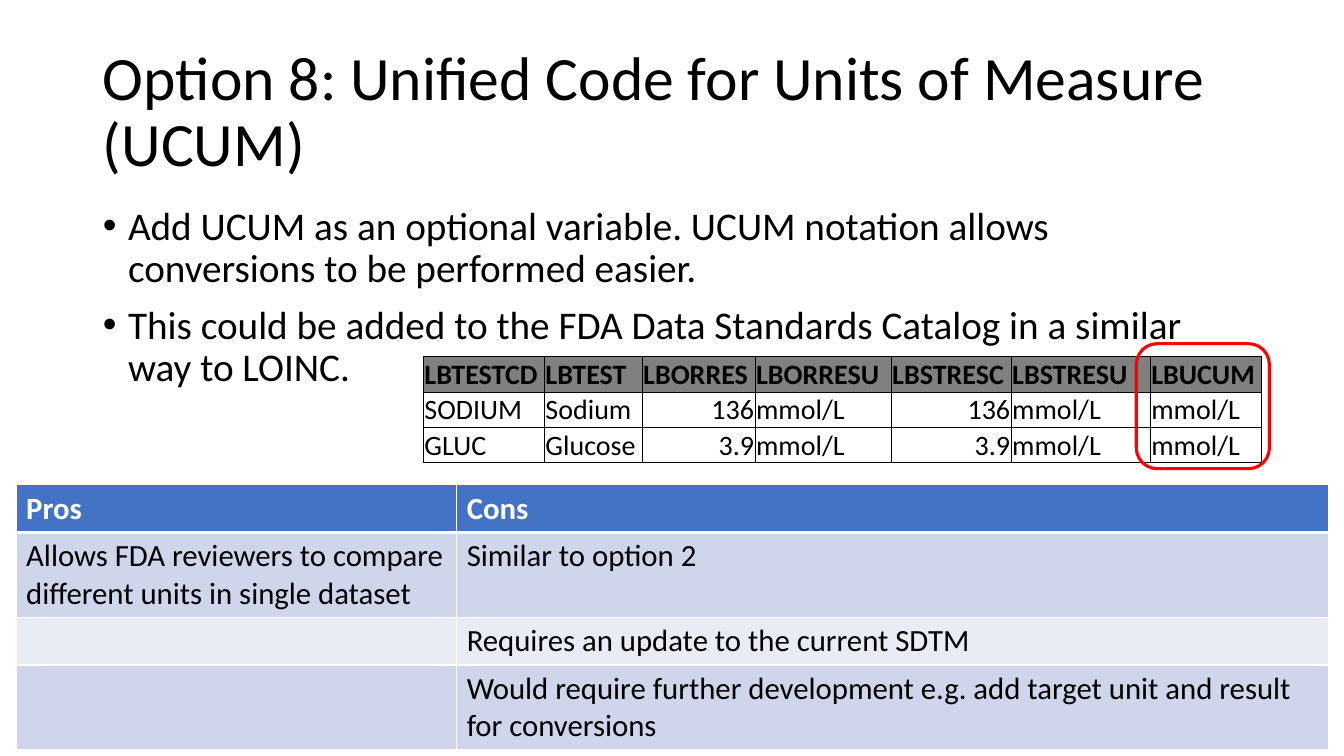
from pptx import Presentation
from pptx.dml.color import RGBColor
from pptx.enum.shapes import MSO_SHAPE
from pptx.enum.text import MSO_ANCHOR, MSO_AUTO_SIZE, PP_ALIGN
from pptx.oxml.ns import qn
from pptx.util import Inches, Pt
from lxml import etree

ROUNDED = MSO_SHAPE.ROUNDED_RECTANGLE
TOP, MIDDLE, BOTTOM = MSO_ANCHOR.TOP, MSO_ANCHOR.MIDDLE, MSO_ANCHOR.BOTTOM
LEFT, RIGHT = PP_ALIGN.LEFT, PP_ALIGN.RIGHT
NO_AUTOFIT = MSO_AUTO_SIZE.NONE

BLACK, WHITE, RED, GREY, BLUE = "000000", "FFFFFF", "FF0000", "808080", "4472C4"
BANDS = ["CFD5EA", "E9EBF5"]


def color(value):
    return RGBColor.from_string(value)


class SlideBuilder:
    font = "Calibri"

    def __init__(self, page):
        self.page = page

    def place(self, shape, box):
        shape.left, shape.top, shape.width, shape.height = map(Inches, box)

    def add_text(self, para, text, size, ink=BLACK, bold=False, align=LEFT):
        para.alignment = align
        span = para.add_run()
        span.text = text
        span.font.name = self.font
        span.font.size = Pt(size)
        span.font.bold = bold
        span.font.color.rgb = color(ink)

    def title(self, text, box):
        holder = self.page.shapes.title
        self.place(holder, box)
        frame = holder.text_frame
        frame.auto_size = NO_AUTOFIT
        frame.vertical_anchor = MIDDLE
        para = frame.paragraphs[0]
        para.line_spacing = 0.9
        self.add_text(para, text, 44)

    def bullets(self, lines, box):
        holder = self.page.placeholders[1]
        self.place(holder, box)
        frame = holder.text_frame
        frame.auto_size = NO_AUTOFIT
        for index, line in enumerate(lines):
            para = frame.add_paragraph() if index else frame.paragraphs[0]
            para.line_spacing = 0.9
            para.space_before = Pt(10)
            self.add_text(para, line, 28)
            props = para._p.get_or_add_pPr()
            props.set("marL", str(Inches(0.25)))
            props.set("indent", str(Inches(-0.25)))
            etree.SubElement(props, qn("a:buFont")).set("typeface", "Arial")
            etree.SubElement(props, qn("a:buChar")).set("char", "•")

    def table(self, rows, at, widths, heights):
        box = (*at, sum(widths), sum(heights))
        frame = self.page.shapes.add_table(len(rows), len(widths), *map(Inches, box))
        grid = frame.table
        grid.first_row = grid.horz_banding = False
        for column, width in zip(grid.columns, widths):
            column.width = Inches(width)
        for row, height in zip(grid.rows, heights):
            row.height = Inches(height)
        return grid

    def cell(self, cell, text, size, fill=None, ink=BLACK, bold=False, align=LEFT, anchor=TOP):
        cell.vertical_anchor = anchor
        if fill:
            cell.fill.solid()
            cell.fill.fore_color.rgb = color(fill)
        else:
            cell.fill.background()
        if text:
            self.add_text(cell.text_frame.paragraphs[0], text, size, ink, bold, align)

    def borders(self, cell, ink, left, right, top, bottom):
        props = cell._tc.get_or_add_tcPr()
        for index, (side, width) in enumerate(zip("LRTB", (left, right, top, bottom))):
            line = etree.Element(qn("a:ln" + side), w=str(Pt(width)))
            solid = etree.SubElement(line, qn("a:solidFill"))
            etree.SubElement(solid, qn("a:srgbClr")).set("val", ink)
            props.insert(index, line)

    def dataset(self, rows, at, widths, height):
        grid = self.table(rows, at, widths, [height] * len(rows))
        for r, row in enumerate(rows):
            for c, text in enumerate(row):
                cell = grid.cell(r, c)
                header = r == 0
                align = RIGHT if text.replace(".", "").isdigit() else LEFT
                self.cell(cell, text, 20, GREY if header else None,
                          bold=header, align=align, anchor=BOTTOM)
                cell.margin_left = cell.margin_right = cell.margin_top = Inches(0.01)
                cell.margin_bottom = 0
                self.borders(cell, BLACK, 0.5, 0.5, 1 if header else 0.5, 0.5)

    def comparison(self, rows, at, widths, heights):
        grid = self.table(rows, at, widths, heights)
        for r, row in enumerate(rows):
            for c, text in enumerate(row):
                cell = grid.cell(r, c)
                header = r == 0
                self.cell(cell, text, 22, BLUE if header else BANDS[(r - 1) % 2],
                          WHITE if header else BLACK, header)
                self.borders(cell, WHITE, 1, 1, 3 if r == 1 else 1, 3 if header else 1)

    def highlight(self, box):
        shape = self.page.shapes.add_shape(ROUNDED, *map(Inches, box))
        shape.shadow.inherit = False
        shape.fill.background()
        shape.line.color.rgb = color(RED)
        shape.line.width = Pt(2.25)


def main():
    deck = Presentation()
    deck.slide_width, deck.slide_height = Inches(13.33), Inches(7.5)
    slide = SlideBuilder(deck.slides.add_slide(deck.slide_layouts[1]))

    slide.title("Option 8: Unified Code for Units of Measure (UCUM)", (0.92, 0.4, 11.23, 1.45))
    slide.bullets([
        "Add UCUM as an optional variable. UCUM notation allows conversions to be performed easier.",
        "This could be added to the FDA Data Standards Catalog in a similar way to LOINC.",
    ], (0.92, 2, 11.5, 4.76))
    slide.comparison([
        ("Pros", "Cons"),
        ("Allows FDA reviewers to compare different units in single dataset", "Similar to option 2"),
        ("", "Requires an update to the current SDTM"),
        ("", "Would require further development e.g. add target unit and result for conversions"),
    ], (0.16, 4.81), [4.37, 8.65], [0.47, 0.84, 0.47, 0.84])
    slide.dataset([
        ("LBTESTCD", "LBTEST", "LBORRES", "LBORRESU", "LBSTRESC", "LBSTRESU", "LBUCUM"),
        ("SODIUM", "Sodium", "136", "mmol/L", "136", "mmol/L", "mmol/L"),
        ("GLUC", "Glucose", "3.9", "mmol/L", "3.9", "mmol/L", "mmol/L"),
    ], (4.2, 3.54), [1.2, 0.97, 1.12, 1.35, 1.19, 1.38, 1.1], 0.35)
    slide.highlight((11.27, 3.41, 1.32, 1.24))

    deck.save("out.pptx")


if __name__ == "__main__":
    main()
